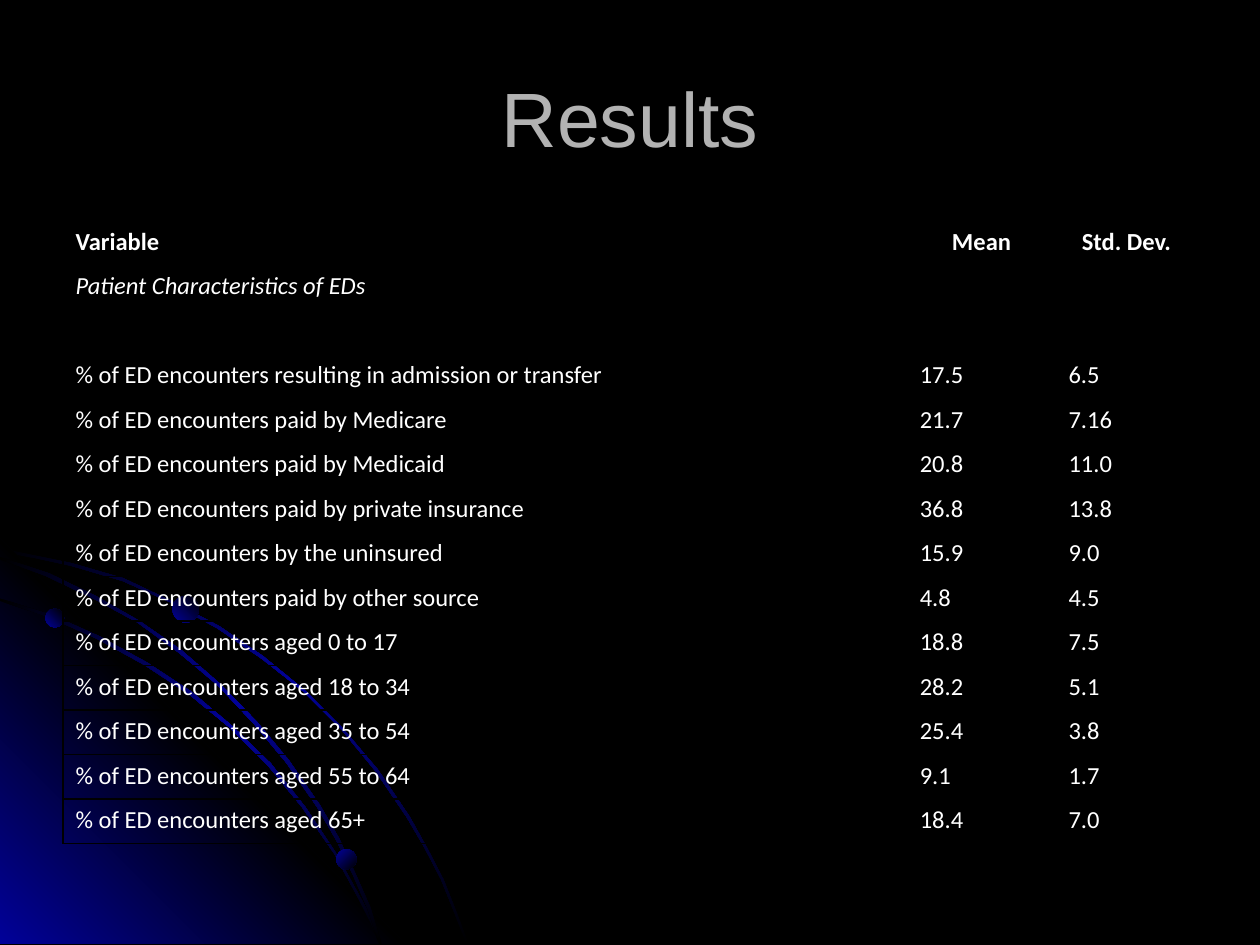
"""Build the results slide: a table of patient characteristics over orbit arcs."""
from lxml import etree
from pptx import Presentation
from pptx.dml.color import RGBColor
from pptx.enum.shapes import MSO_SHAPE
from pptx.enum.text import MSO_ANCHOR, PP_ALIGN
from pptx.oxml.ns import qn
from pptx.util import Pt

OVAL = MSO_SHAPE.OVAL
MIDDLE = MSO_ANCHOR.MIDDLE
LEFT, CENTER = PP_ALIGN.LEFT, PP_ALIGN.CENTER
BLACK = RGBColor(0x00, 0x00, 0x00)
BLUE = RGBColor(0x01, 0x01, 0x99)
GRAY = RGBColor(0xB2, 0xB2, 0xB2)
WHITE = RGBColor(0xFF, 0xFF, 0xFF)
HUNDREDTH = Pt(0.72)
INDENT = Pt(27)


def paint(shape, colors, angle):
    shape.shadow.inherit = False
    shape.line.fill.background()
    shape.fill.gradient()
    grad = shape.fill._xPr.find(qn("a:gradFill"))
    stops = grad.find(qn("a:gsLst"))
    for stop in list(stops):
        stops.remove(stop)
    for i, color in enumerate(colors):
        pos = 100000 * i // (len(colors) - 1)
        stop = etree.SubElement(stops, qn("a:gs"), pos=str(pos))
        etree.SubElement(stop, qn("a:srgbClr"), val=str(color))
    grad.find(qn("a:lin")).set("ang", str(angle * 60000))


def write(tf, text, font="Calibri", size=14, color=WHITE, bold=False, italic=False, align=LEFT):
    p = tf.paragraphs[0]
    p.alignment = align
    r = p.add_run()
    r.text = text
    r.font.name = font
    r.font.size = Pt(size)
    r.font.color.rgb = color
    r.font.bold = bold
    r.font.italic = italic
    return p


prs = Presentation()
prs.slide_width, prs.slide_height = Pt(720), Pt(540)
s = prs.slides.add_slide(prs.slide_layouts[5])
s.background.fill.solid()
s.background.fill.fore_color.rgb = BLACK

ARC = (BLACK, BLUE, BLACK)
outer_arc = [
    (57, 447), (28, 441), (0, 435), (0, 438), (28, 443), (56, 449), (97, 461), (135, 478),
    (173, 499), (208, 523), (241, 549), (271, 579), (298, 612), (323, 649), (337, 673),
    (350, 698), (360, 723), (370, 749), (372, 749), (362, 723), (352, 698), (339, 673),
    (325, 648), (300, 611), (272, 578), (242, 548), (209, 521), (174, 497), (136, 477), (98, 459),
]
corner = [(322, 749), (0, 749), (0, 427)]
inner_arc = [
    (285, 714), (294, 732), (301, 749), (303, 749), (296, 730), (286, 712), (266, 676),
    (242, 640), (215, 606), (184, 576), (152, 549), (117, 526), (79, 505), (41, 488),
    (0, 475), (0, 477), (39, 490), (77, 507), (115, 528), (150, 551), (183, 578),
    (213, 608), (240, 641), (265, 677),
]
middle_arc = [
    (0, 442), (0, 444), (36, 457), (74, 475), (109, 494), (142, 518), (173, 544), (202, 575),
    (227, 605), (252, 641), (267, 667), (280, 694), (292, 722), (301, 749), (303, 749),
    (294, 720), (282, 693), (269, 665), (254, 639), (229, 603), (204, 573), (175, 543),
    (144, 516), (111, 493), (76, 473), (39, 455),
]
orbits = s.shapes.add_group_shape()
for points, colors, angle in [
    (outer_arc, ARC, 45),
    (corner, (BLUE, BLACK, BLUE), 315),
    (inner_arc, ARC, 45),
    (middle_arc, ARC, 45),
]:
    builder = orbits.shapes.build_freeform(*points[0], scale=HUNDREDTH)
    builder.add_line_segments(points[1:], close=True)
    paint(builder.convert_to_shape(), colors, angle)

for x, y, size, angle in [(25.9, 347.8, 10.8, 315), (192.2, 485.3, 11.5, 45), (98.6, 340.6, 15.1, 315)]:
    planet = orbits.shapes.add_shape(OVAL, Pt(x), Pt(y), Pt(size), Pt(size))
    paint(planet, (BLUE, BLACK), angle)

title = s.shapes.title
title.left, title.top, title.width, title.height = Pt(36), Pt(21.6), Pt(648), Pt(90)
title.text_frame.vertical_anchor = MIDDLE
write(title.text_frame, "Results", font="Arial", size=44, color=GRAY, align=CENTER)

rows = [
    ("Variable", "Mean", "Std. Dev."),
    ("Patient Characteristics of EDs", "", ""),
    ("% of ED encounters resulting in admission or transfer", "17.5", "6.5"),
    ("% of ED encounters paid by Medicare", "21.7", "7.16"),
    ("% of ED encounters paid by Medicaid", "20.8", "11.0"),
    ("% of ED encounters paid by private insurance", "36.8", "13.8"),
    ("% of ED encounters by the uninsured", "15.9", "9.0"),
    ("% of ED encounters paid by other source", "4.8", "4.5"),
    ("% of ED encounters aged 0 to 17", "18.8", "7.5"),
    ("% of ED encounters aged 18 to 34", "28.2", "5.1"),
    ("% of ED encounters aged 35 to 54", "25.4", "3.8"),
    ("% of ED encounters aged 55 to 64", "9.1", "1.7"),
    ("% of ED encounters aged 65+", "18.4", "7.0"),
]
ROW_HEIGHT = 25.45
frame = s.shapes.add_table(len(rows), 3, Pt(36), Pt(126), Pt(648), Pt(ROW_HEIGHT * (len(rows) + 1)))
table = frame.table
table.first_row = table.horz_banding = False
for column, width in zip(table.columns, (482.4, 85, 80.6)):
    column.width = Pt(width)

for i, row in enumerate(rows):
    table.rows[i].height = Pt(ROW_HEIGHT * (2 if i == 1 else 1))
    for j, text in enumerate(row):
        cell = table.cell(i, j)
        tcPr = cell._tc.get_or_add_tcPr()
        for side in ("lnL", "lnR", "lnT", "lnB"):
            ln = etree.SubElement(tcPr, qn(f"a:{side}"), w=str(Pt(1)))
            solid = etree.SubElement(ln, qn("a:solidFill"))
            etree.SubElement(solid, qn("a:srgbClr"), val=str(BLACK))
        cell.fill.background()
        if text:
            align = CENTER if i == 0 and j > 0 else LEFT
            p = write(cell.text_frame, text, bold=i == 0, italic=i == 1, align=align)
            pPr = p._p.get_or_add_pPr()
            pPr.set("marL", str(INDENT))
            pPr.set("indent", str(-INDENT))

prs.save("out.pptx")
